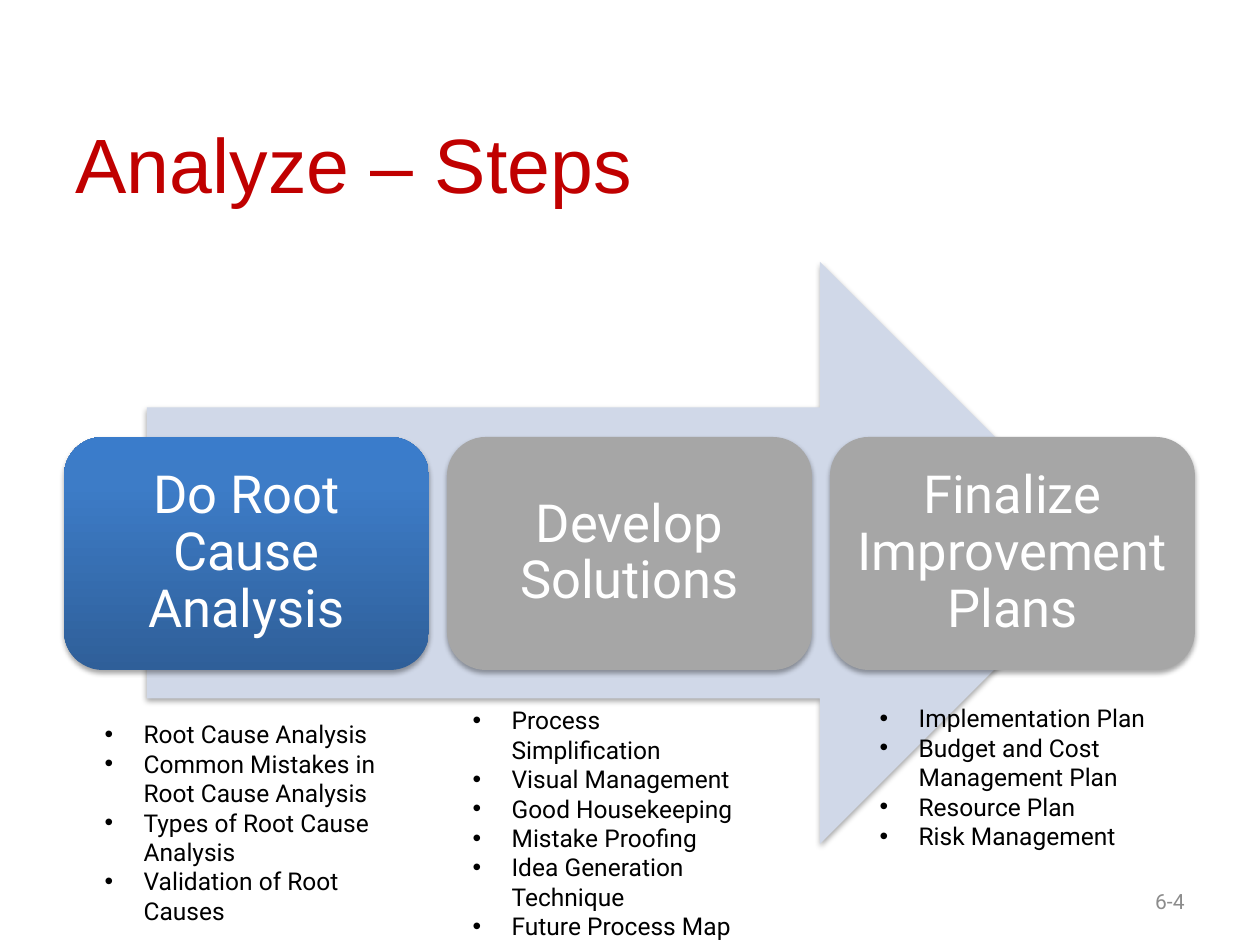
from copy import deepcopy
from dataclasses import dataclass

from lxml import etree
from pptx import Presentation
from pptx import util as u
from pptx.dml.color import RGBColor
from pptx.enum import shapes, text
from pptx.oxml.ns import qn

PX = 914400 / 126


@dataclass(frozen=True)
class Theme:
    title_font: str = "Arial"
    body_font: str = "Roboto"
    title: str = "C00000"
    text: str = "000000"
    on_box: str = "FFFFFF"
    muted: str = "8C8C8C"
    arrow: str = "D0D8E8"
    pending: str = "A6A6A6"
    active: tuple = ((0, "2F5F99"), (0.8, "3D7CC7"), (1, "3A7CCB"))
    title_size: int = 44
    step_size: int = 30
    list_size: int = 14
    number_size: int = 12


@dataclass(frozen=True)
class Step:
    name: str
    topics: tuple[str, ...]
    list_left: int
    list_top: int
    list_height: int
    placeholder: int
    active: bool = False


THEME = Theme()
STEPS = (
    Step("Do Root Cause Analysis",
         ("Root Cause Analysis", "Common Mistakes in Root Cause Analysis",
          "Types of Root Cause Analysis", "Validation of Root Causes"),
         92, 713, 220, 1, active=True),
    Step("Develop Solutions",
         ("Process Simplification", "Visual Management", "Good Housekeeping",
          "Mistake Proofing", "Idea Generation Technique", "Future Process Map"),
         460, 699, 251, 2),
    Step("Finalize Improvement Plans",
         ("Implementation Plan", "Budget and Cost Management Plan",
          "Resource Plan", "Risk Management"),
         867, 697, 161, 4),
)
BOX_LEFT, BOX_TOP, BOX_WIDTH, BOX_HEIGHT, BOX_PITCH = 64, 437, 365, 233, 383
LIST_WIDTH, LIST_INDENT, BOX_INSET = 304, 39, 15


def px(n: int) -> int:
    return round(n * PX)


def place(sp, left: int, top: int, width: int, height: int) -> None:
    sp.left, sp.top, sp.width, sp.height = map(px, (left, top, width, height))


def style(p, font: str, size: int, color: str, align) -> None:
    p.alignment = align
    for r in p.runs:
        r.font.name, r.font.size, r.font.bold = font, u.Pt(size), False
        r.font.color.rgb = RGBColor.from_string(color)


def add_shadow(sp) -> None:
    sp.shadow.inherit = False
    effects = sp.element.spPr.find(qn("a:effectLst"))
    shadow = etree.SubElement(effects, qn("a:outerShdw"), blurRad=str(u.Pt(3.1)),
                              dist=str(u.Pt(1.8)), dir="5400000", rotWithShape="0")
    color = etree.SubElement(shadow, qn("a:srgbClr"), val="000000")
    etree.SubElement(color, qn("a:alpha"), val="35000")


def add_block(s, kind, left: int, top: int, width: int, height: int, color: str):
    sp = s.shapes.add_shape(kind, *map(px, (left, top, width, height)))
    sp.fill.solid()
    sp.fill.fore_color.rgb = RGBColor.from_string(color)
    sp.line.fill.background()
    add_shadow(sp)
    return sp


def fill_gradient(sp, colors: tuple) -> None:
    sp.fill.gradient()
    sp.fill.gradient_angle = 90
    stops = sp.element.spPr.find(".//" + qn("a:gsLst"))
    stops.append(deepcopy(stops[0]))
    for stop, (position, color) in zip(sp.fill.gradient_stops, colors):
        stop.position = position
        stop.color.rgb = RGBColor.from_string(color)


def add_step_box(s, index: int, step: Step) -> None:
    sp = add_block(s, shapes.MSO_SHAPE.ROUNDED_RECTANGLE, BOX_LEFT + index * BOX_PITCH,
                   BOX_TOP, BOX_WIDTH, BOX_HEIGHT, THEME.pending)
    if step.active:
        fill_gradient(sp, THEME.active)
    tf = sp.text_frame
    tf.text = step.name
    tf.word_wrap = True
    tf.vertical_anchor = text.MSO_ANCHOR.MIDDLE
    tf.margin_left = tf.margin_right = tf.margin_top = tf.margin_bottom = px(BOX_INSET)
    p = tf.paragraphs[0]
    p.line_spacing = 0.9
    style(p, THEME.body_font, THEME.step_size, THEME.on_box, text.PP_ALIGN.CENTER)


def fill_list(sp, step: Step) -> None:
    place(sp, step.list_left, step.list_top, LIST_WIDTH, step.list_height)
    # Bring the list in front of the arrow
    sp.element.getparent().append(sp.element)
    tf = sp.text_frame
    tf.text = "\n".join(step.topics)
    tf.word_wrap = True
    tf.auto_size = text.MSO_AUTO_SIZE.NONE
    tf.vertical_anchor = text.MSO_ANCHOR.TOP
    for p in tf.paragraphs:
        p.space_before = u.Pt(0)
        pPr = p._p.get_or_add_pPr()
        pPr.set("marL", str(px(LIST_INDENT)))
        pPr.set("indent", str(-px(LIST_INDENT)))
        etree.SubElement(pPr, qn("a:buFont"), typeface="Arial")
        etree.SubElement(pPr, qn("a:buChar"), char="•")
        style(p, THEME.body_font, THEME.list_size, THEME.text, text.PP_ALIGN.LEFT)


def add_title(s) -> None:
    sp = s.shapes.title
    place(sp, 63, 84, 955, 158)
    tf = sp.text_frame
    tf.text = "Analyze – Steps"
    tf.vertical_anchor = text.MSO_ANCHOR.MIDDLE
    style(tf.paragraphs[0], THEME.title_font, THEME.title_size, THEME.title,
          text.PP_ALIGN.LEFT)


def add_page_number(s) -> None:
    tf = s.shapes.add_textbox(*map(px, (903, 876, 294, 50))).text_frame
    tf.text = "6-4"
    tf.word_wrap = True
    tf.vertical_anchor = text.MSO_ANCHOR.MIDDLE
    style(tf.paragraphs[0], THEME.body_font, THEME.number_size, THEME.muted,
          text.PP_ALIGN.RIGHT)


def main() -> None:
    prs = Presentation()
    prs.slide_width, prs.slide_height = u.Inches(10), u.Inches(7.5)
    # The comparison layout offers enough bodies for three lists
    s = prs.slides.add_slide(prs.slide_layouts.get_by_name("Comparison"))
    bodies = {sp.placeholder_format.idx: sp for sp in s.placeholders}
    add_title(s)

    # Process arrow and step boxes
    add_block(s, shapes.MSO_SHAPE.RIGHT_ARROW, 147, 262, 964, 582, THEME.arrow)
    for i, step in enumerate(STEPS):
        add_step_box(s, i, step)

    # Topics under each step
    for step in STEPS:
        fill_list(bodies[step.placeholder], step)
    unused = bodies[3].element
    unused.getparent().remove(unused)

    add_page_number(s)
    prs.save("out.pptx")


if __name__ == "__main__":
    main()
